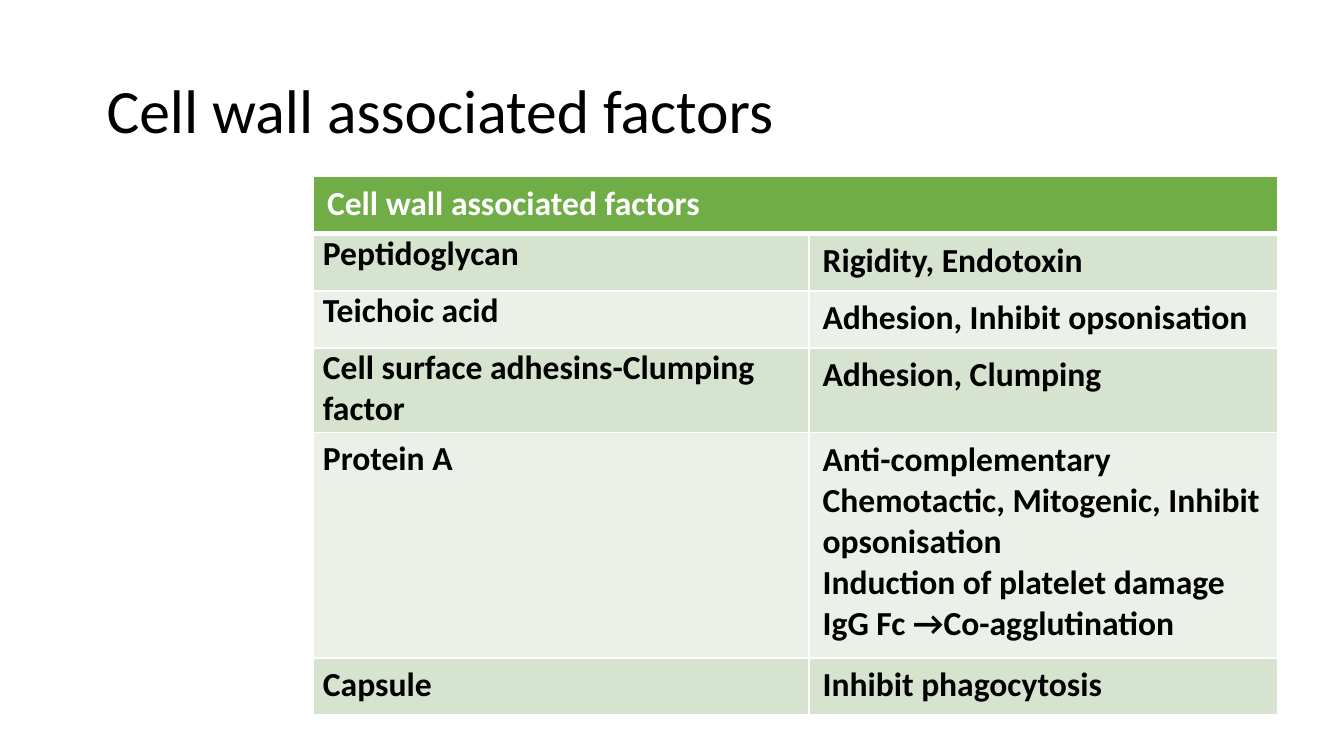
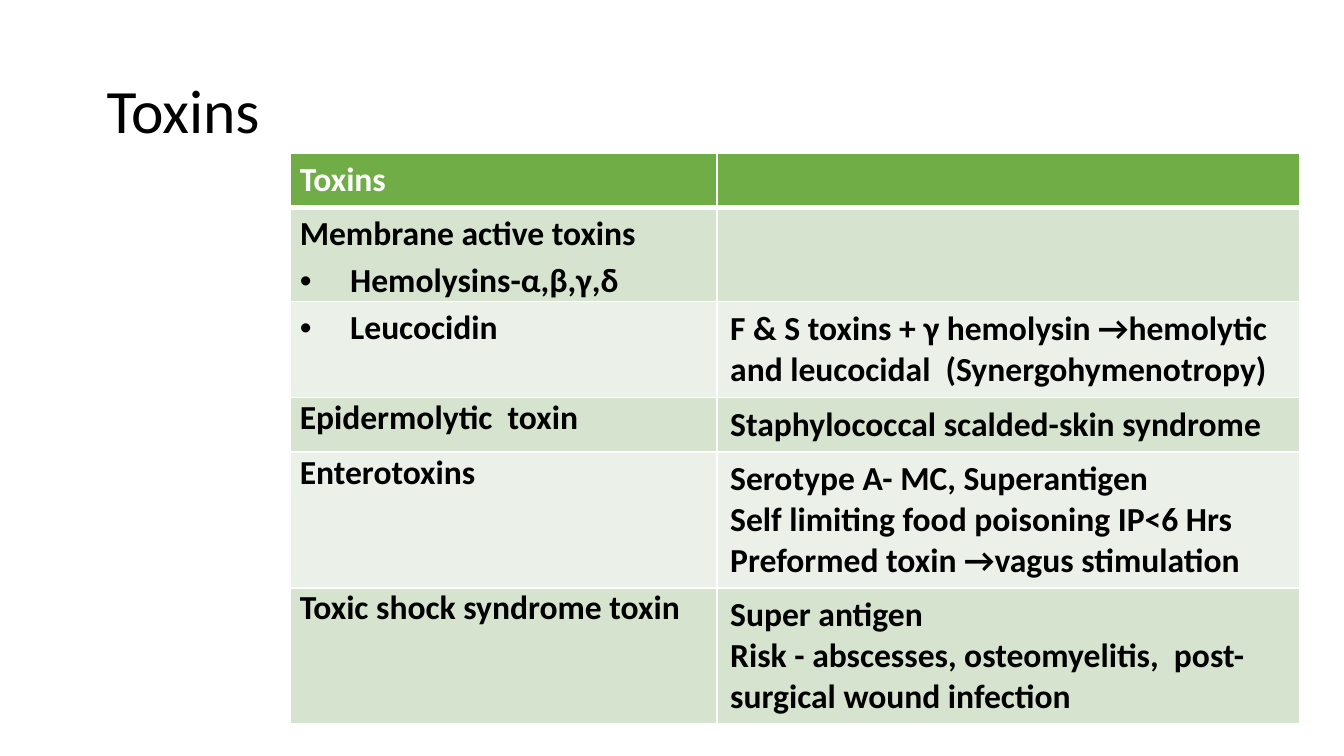
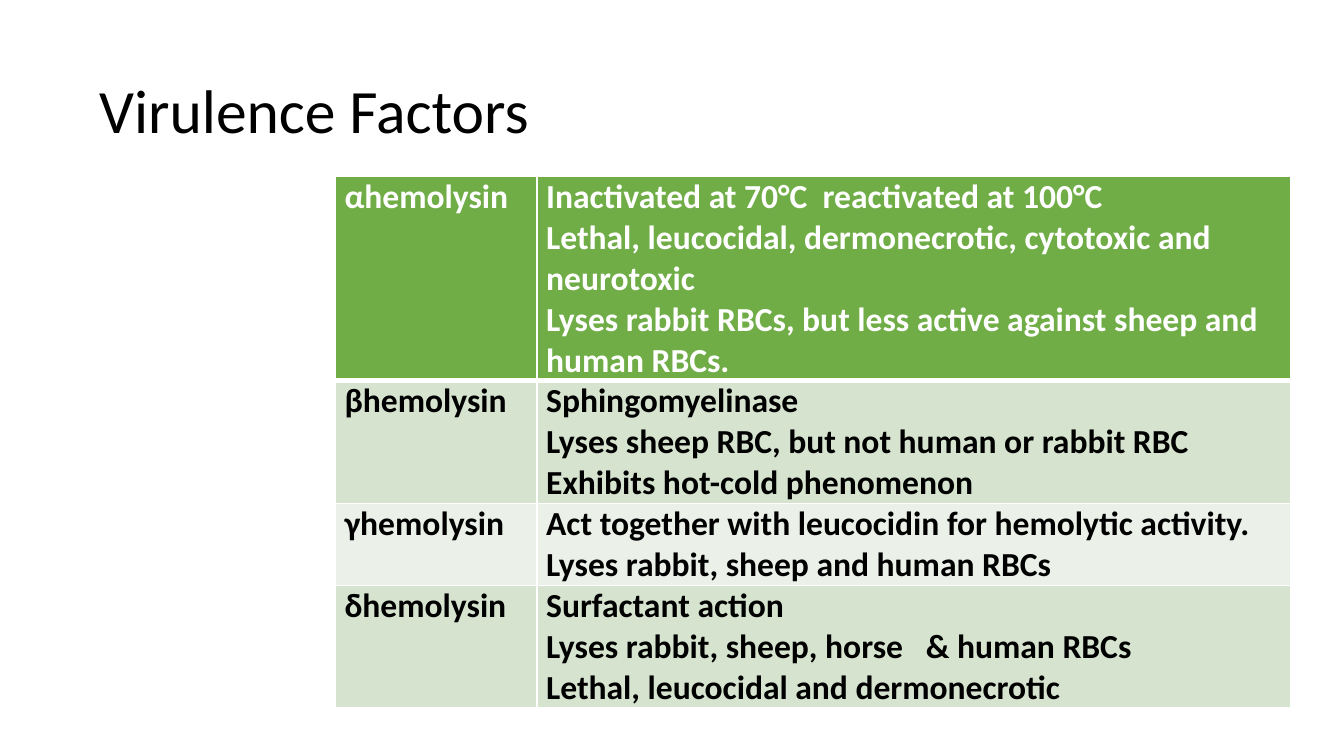
from dataclasses import dataclass

from lxml.etree import SubElement
from pptx import Presentation
from pptx.dml.color import RGBColor
from pptx.enum.text import MSO_ANCHOR, PP_ALIGN
from pptx.oxml.ns import qn
from pptx.util import Pt

BLACK = RGBColor(0x00, 0x00, 0x00)
WHITE = RGBColor(0xFF, 0xFF, 0xFF)
HEADER_GREEN = RGBColor(0x70, 0xAD, 0x47)
BAND_DARK = RGBColor(0xD5, 0xE3, 0xCF)
BAND_LIGHT = RGBColor(0xEB, 0xF1, 0xE9)


@dataclass
class Line:
    """One paragraph of a table cell."""
    text: str
    spacing: float = 1.0
    hanging: bool = False
    bullet: bool = False
    justified: bool = False


def plain(*texts):
    """Return unindented lines."""
    return [Line(text) for text in texts]


def spaced(*texts):
    """Return lines with wider line spacing."""
    return [Line(text, spacing=1.15) for text in texts]


def bulleted(text):
    """Return one bulleted line in a list."""
    return [Line(text, spacing=1.15, hanging=True, bullet=True)]


def hanging(*texts):
    """Return lines with a hanging indent."""
    return [Line(text, hanging=True) for text in texts]


def justified(text):
    """Return one justified line in a list."""
    return [Line(text, justified=True)]


class Deck:
    """Holds the shared style and the current slide."""

    font_name = "Calibri"
    title_size = Pt(33)
    cell_size = Pt(18)
    indent = Pt(27)
    tight_margins = (Pt(5), Pt(0))
    loose_margins = (Pt(7.2), Pt(3.6))

    def __init__(self):
        self.presentation = Presentation()
        self.presentation.slide_width = Pt(720)
        self.presentation.slide_height = Pt(405)
        self.slide = None

    def add_slide(self, title, left=50, width=620):
        """Start a slide with its title."""
        self.slide = self.presentation.slides.add_slide(self.presentation.slide_layouts[6])
        shape = self.slide.shapes.add_textbox(Pt(left), Pt(21.6), Pt(width), Pt(78.4))
        frame = shape.text_frame
        frame.word_wrap = True
        frame.vertical_anchor = MSO_ANCHOR.MIDDLE
        paragraph = frame.paragraphs[0]
        paragraph.line_spacing = 0.9
        self.add_run(paragraph, title, self.title_size, BLACK)

    def add_run(self, paragraph, text, size, color, bold=False):
        """Append a styled run to a paragraph."""
        run = paragraph.add_run()
        run.text = text
        run.font.name = self.font_name
        run.font.size = size
        run.font.bold = bold
        run.font.color.rgb = color

    def add_table(self, left, top, widths, heights, rows, tight_columns=(0,)):
        """Add a table with a green header and alternating bands."""
        shape = self.slide.shapes.add_table(
            len(rows), len(widths), Pt(left), Pt(top), Pt(sum(widths)), Pt(sum(heights)))
        table = shape.table
        for column, width in zip(table.columns, widths):
            column.width = Pt(width)
        for row, height in zip(table.rows, heights):
            row.height = Pt(height)
        for row_index, row in enumerate(rows):
            spans_row = len(row) < len(widths)
            if spans_row:
                table.cell(row_index, 0).merge(table.cell(row_index, len(widths) - 1))
            for column_index, lines in enumerate(row):
                cell = table.cell(row_index, column_index)
                tight = column_index in tight_columns and not spans_row
                self.style_cell(cell, row_index, tight)
                self.fill_cell(cell, lines, WHITE if row_index == 0 else BLACK)

    def style_cell(self, cell, row_index, tight):
        """Set the margins, borders and band colour of a cell."""
        side, edge = self.tight_margins if tight else self.loose_margins
        cell.margin_left = cell.margin_right = side
        cell.margin_top = cell.margin_bottom = edge
        properties = cell._tc.get_or_add_tcPr()
        thick_edge = {0: "lnB", 1: "lnT"}.get(row_index)
        for tag in ("lnL", "lnR", "lnT", "lnB"):
            width = Pt(3 if tag == thick_edge else 1)
            border = SubElement(properties, qn(f"a:{tag}"), w=str(width))
            fill = SubElement(border, qn("a:solidFill"))
            SubElement(fill, qn("a:srgbClr"), val=str(WHITE))
        cell.fill.solid()
        band = BAND_DARK if row_index % 2 else BAND_LIGHT
        cell.fill.fore_color.rgb = HEADER_GREEN if row_index == 0 else band

    def fill_cell(self, cell, lines, color):
        """Write the lines of a cell."""
        frame = cell.text_frame
        for index, line in enumerate(lines):
            paragraph = frame.add_paragraph() if index else frame.paragraphs[0]
            paragraph.line_spacing = line.spacing
            if line.justified:
                paragraph.alignment = PP_ALIGN.JUSTIFY
            properties = paragraph._p.get_or_add_pPr()
            if line.hanging:
                properties.set("marL", str(self.indent))
                properties.set("indent", str(-self.indent))
            if line.bullet:
                SubElement(properties, qn("a:buFont"), typeface="Arial")
                SubElement(properties, qn("a:buChar"), char="•")
            self.add_run(paragraph, line.text, self.cell_size, color, bold=True)


def main():
    """Build and save the three slides."""
    deck = Deck()

    deck.add_slide("Cell wall associated factors")
    deck.add_table(168, 94.6, (265.5, 251.3), (30.6, 30.6, 30.6, 45.4, 120.8, 30.6), [
        [plain("Cell wall associated factors")],
        [plain("Peptidoglycan"), plain("Rigidity, Endotoxin")],
        [plain("Teichoic acid"), plain("Adhesion, Inhibit opsonisation")],
        [plain("Cell surface adhesins-Clumping factor"), plain("Adhesion, Clumping")],
        [spaced("Protein A"),
         plain("Anti-complementary Chemotactic, Mitogenic, Inhibit opsonisation",
               "Induction of platelet damage",
               "IgG Fc →Co-agglutination")],
        [spaced("Capsule"), plain("Inhibit phagocytosis")],
    ])

    deck.add_slide("Toxins")
    deck.add_table(155.6, 82, (228.4, 312.6), (29.2, 50.4, 51.4, 29.2, 72.8, 72.8), [
        [spaced("Toxins"), []],
        [spaced("Membrane active toxins") + bulleted("Hemolysins-α,β,γ,δ"), []],
        [bulleted("Leucocidin"),
         plain("F & S toxins + γ hemolysin →hemolytic and leucocidal  (Synergohymenotropy)")],
        [plain("Epidermolytic  toxin"), plain("Staphylococcal scalded-skin syndrome")],
        [justified("Enterotoxins"),
         plain("Serotype A- MC, Superantigen",
               "Self limiting food poisoning IP<6 Hrs",
               "Preformed toxin →vagus stimulation")],
        [justified("Toxic shock syndrome toxin"),
         plain("Super antigen",
               "Risk - abscesses, osteomyelitis,  post-surgical wound infection")],
    ])

    deck.add_slide("Virulence Factors", left=46, width=326)
    deck.add_table(179.6, 94.6, (108, 403.8), (109.4, 65.8, 43.9, 65.8), [
        [plain("αhemolysin"),
         plain("Inactivated at 70°C  reactivated at 100°C",
               "Lethal, leucocidal, dermonecrotic, cytotoxic and neurotoxic",
               "Lyses rabbit RBCs, but less active against sheep and human RBCs.")],
        [plain("βhemolysin"),
         plain("Sphingomyelinase")
         + hanging("Lyses sheep RBC, but not human or rabbit RBC",
                   "Exhibits hot-cold phenomenon")],
        [plain("γhemolysin"),
         hanging("Act together with leucocidin for hemolytic activity.",
                 "Lyses rabbit, sheep and human RBCs")],
        [plain("δhemolysin"),
         hanging("Surfactant action",
                 "Lyses rabbit, sheep, horse   & human RBCs",
                 "Lethal, leucocidal and dermonecrotic")],
    ], tight_columns=(0, 1))

    deck.presentation.save("out.pptx")


if __name__ == "__main__":
    main()
